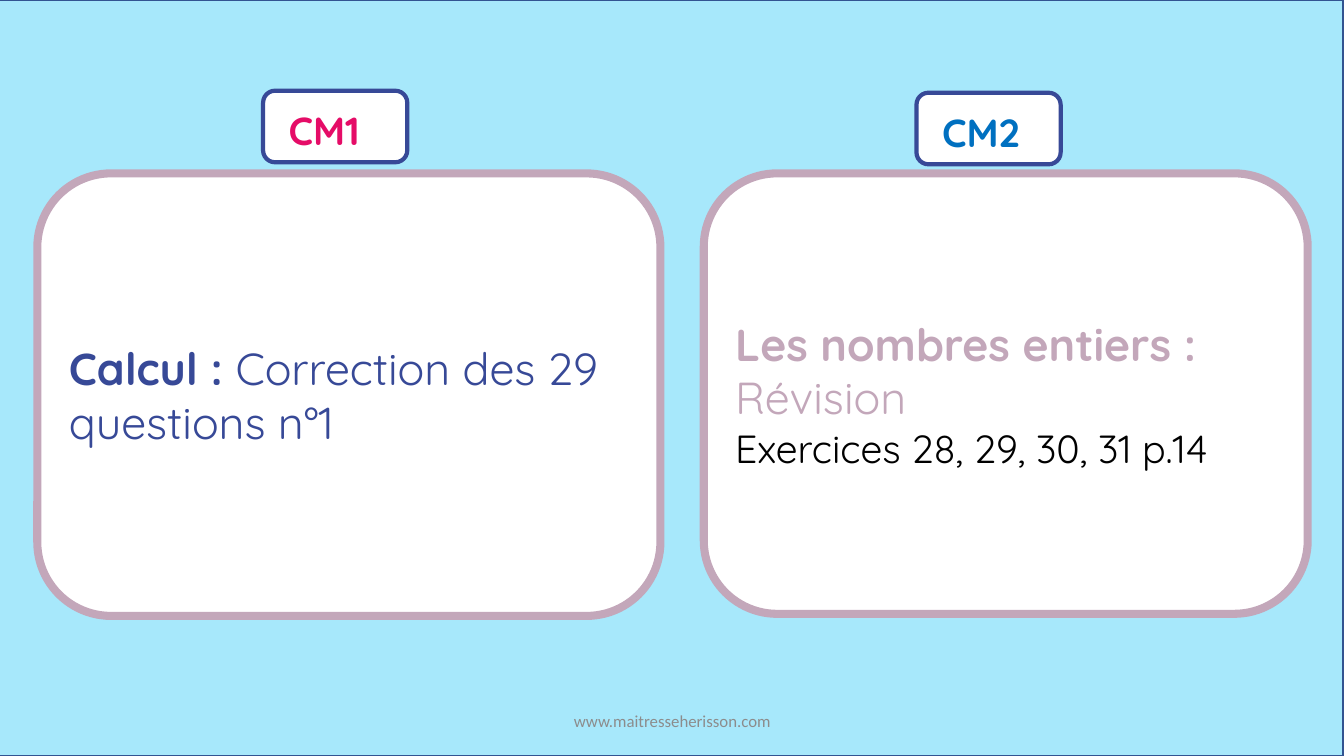
from pptx import Presentation
from pptx.dml.color import RGBColor
from pptx.enum.shapes import MSO_SHAPE
from pptx.enum.text import MSO_ANCHOR, PP_ALIGN
from pptx.util import Inches, Pt

COLORS = {
    "sky": "A7E8FB", "edge": "325491", "white": "FFFFFF", "navy": "374997",
    "mauve": "C3A7BA", "pink": "E50C67", "blue": "0070C0",
    "black": "000000", "gray": "8C8C8C",
}

# Each run: text, size, color, bold
CARDS = [
    {
        "box": (0.37, 1.72, 6.18, 4.39),
        "tag": (2.61, 0.9),
        "label": ("CM1", 28, "pink", True),
        "lines": [[("Calcul : ", 32, "navy", True),
                   ("Correction des 29 questions n°1", 32, "navy", False)]],
    },
    {
        "box": (6.98, 1.72, 5.99, 4.37),
        "tag": (9.09, 0.92),
        "label": ("CM2", 28, "blue", True),
        "lines": [[("Les nombres entiers : ", 32, "mauve", True),
                   ("Révision", 32, "mauve", False)],
                  [("Exercices 28, 29, 30, 31 p.14", 28, "black", False)]],
    },
]
TAG_SIZE = (1.43, 0.71)
LABEL_SHIFT = (0.155, 0.11)
LABEL_SIZE = (1.1, 0.57)
FOOTER = ("www.maitresseherisson.com", 12, "gray", False)
FOOTER_BOX = (4.42, 6.95, 4.5, 0.4)


def color(name):
    return RGBColor.from_string(COLORS[name])


def add_panel(slide, kind, box, fill, edge, width):
    panel = slide.shapes.add_shape(kind, *map(Inches, box))
    panel.shadow.inherit = False
    panel.fill.solid()
    panel.fill.fore_color.rgb = color(fill)
    panel.line.color.rgb = color(edge)
    panel.line.width = Pt(width)
    return panel


def write(shape, lines, font="Quicksand", align=PP_ALIGN.LEFT,
          anchor=MSO_ANCHOR.MIDDLE):
    frame = shape.text_frame
    frame.word_wrap = True
    frame.vertical_anchor = anchor
    for i, line in enumerate(lines):
        para = frame.paragraphs[0] if i == 0 else frame.add_paragraph()
        para.alignment = align
        for text, size, tint, bold in line:
            run = para.add_run()
            run.text = text
            style = {"name": font, "size": Pt(size), "bold": bold}
            for key, value in style.items():
                setattr(run.font, key, value)
            run.font.color.rgb = color(tint)


def add_text(slide, box, run, **style):
    write(slide.shapes.add_textbox(*map(Inches, box)), [[run]], **style)


def main():
    deck = Presentation()
    deck.slide_width, deck.slide_height = Inches(13.33), Inches(7.5)
    slide = deck.slides.add_slide(deck.slide_layouts[6])
    add_panel(slide, MSO_SHAPE.RECTANGLE, (-0.01, 0, 13.33, 7.5),
              "sky", "edge", 1)
    for card in CARDS:
        panel = add_panel(slide, MSO_SHAPE.ROUNDED_RECTANGLE, card["box"],
                          "white", "mauve", 5.75)
        write(panel, card["lines"])
        add_panel(slide, MSO_SHAPE.ROUNDED_RECTANGLE, card["tag"] + TAG_SIZE,
                  "white", "navy", 3)
        spot = tuple(a + b for a, b in zip(card["tag"], LABEL_SHIFT))
        add_text(slide, spot + LABEL_SIZE, card["label"],
                 anchor=MSO_ANCHOR.TOP)
    add_text(slide, FOOTER_BOX, FOOTER, font="Calibri",
             align=PP_ALIGN.CENTER)
    deck.save("out.pptx")


if __name__ == "__main__":
    main()
